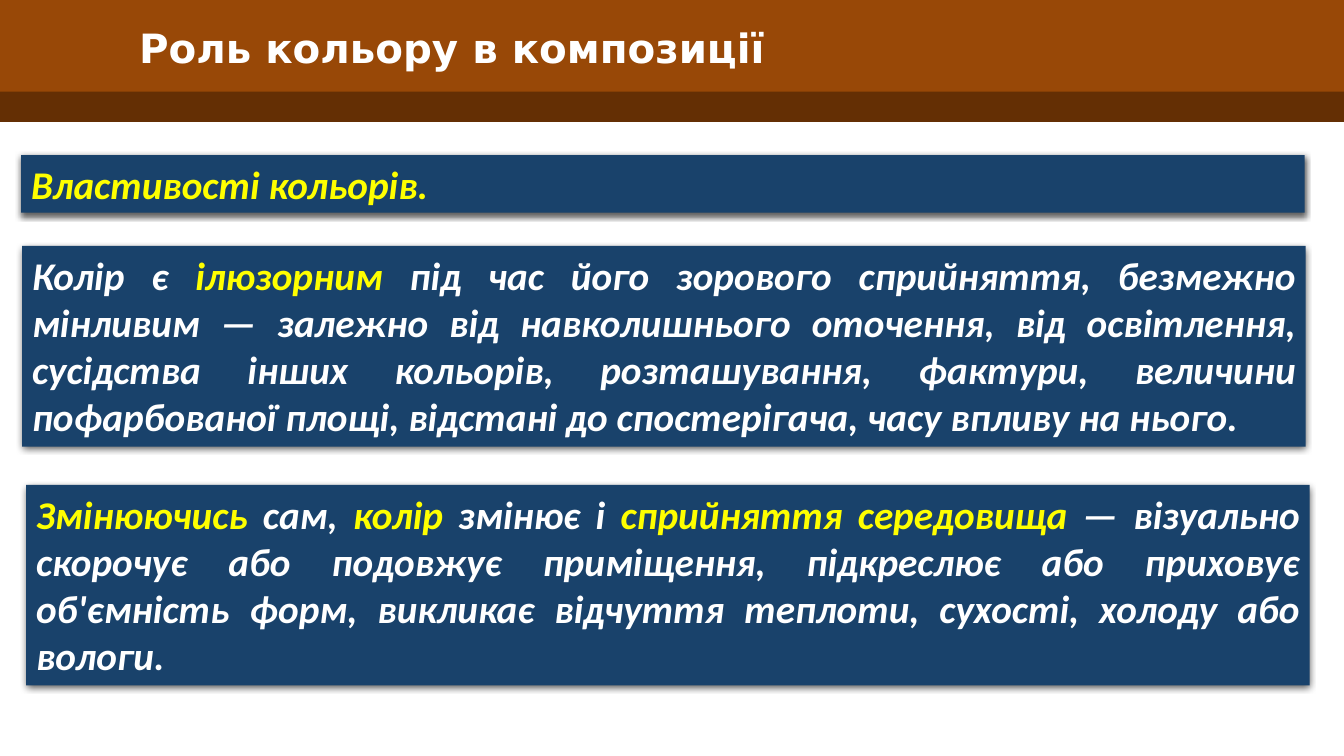
"""Build a slide about the role of colour in composition."""
import lxml.etree
import pptx
import pptx.dml.color
import pptx.enum.shapes
import pptx.enum.text
import pptx.oxml.ns
import pptx.util

Inches = pptx.util.Inches
RGBColor = pptx.dml.color.RGBColor
Align = pptx.enum.text.PP_ALIGN
Anchor = pptx.enum.text.MSO_ANCHOR

WHITE = RGBColor(0xFF, 0xFF, 0xFF)
YELLOW = RGBColor(0xFF, 0xFF, 0x00)
NAVY = RGBColor(0x19, 0x42, 0x6B)
BROWN = RGBColor(0x98, 0x48, 0x07)
DARK_BROWN = RGBColor(0x64, 0x2F, 0x04)

SLIDE_WIDTH = 13.33
PANEL_WIDTH = 12.73
PANELS = [
    (0.21, 1.54, 0.57, "*Властивості кольорів.\u00a0*"),
    (0.22, 2.44, 1.99,
     "Колір є *ілюзорним* під час його зорового сприйняття, безмежно мінливим — "
     "залежно від навколишнього оточення, від освітлення, сусідства інших кольорів, "
     "розташування, фактури, величини пофарбованої площі, відстані до спостерігача, "
     "часу впливу на нього. "),
    (0.26, 4.81, 1.99,
     "*Змінюючись* сам, *колір* змінює і *сприйняття середовища *— візуально "
     "скорочує або подовжує приміщення, підкреслює або приховує об'ємність форм, "
     "викликає відчуття теплоти, сухості, холоду або вологи."),
]


def write_text(shape, text, font="Calibri", size=28, italic=False,
               align=Align.LEFT, anchor=Anchor.TOP):
    frame = shape.text_frame
    frame.word_wrap = True
    frame.auto_size = pptx.enum.text.MSO_AUTO_SIZE.NONE
    frame.vertical_anchor = anchor
    paragraph = frame.paragraphs[0]
    paragraph.alignment = align
    for index, part in enumerate(text.split("*")):
        if part:
            run = paragraph.add_run()
            run.text = part
            run.font.name = font
            run.font.size = pptx.util.Pt(size)
            run.font.bold = True
            run.font.italic = italic
            run.font.color.rgb = YELLOW if index % 2 else WHITE


class SlideBuilder:
    def __init__(self, presentation):
        self.slide = presentation.slides.add_slide(presentation.slide_layouts[5])

    def rectangle(self, left, top, width, height, color):
        shape = self.slide.shapes.add_shape(
            pptx.enum.shapes.MSO_SHAPE.RECTANGLE,
            Inches(left), Inches(top), Inches(width), Inches(height))
        shape.shadow.inherit = False
        shape.fill.solid()
        shape.fill.fore_color.rgb = color
        shape.line.fill.background()
        return shape

    def title(self, text):
        title = self.slide.shapes.title
        title.left, title.top = Inches(1.28), Inches(0.18)
        title.width, title.height = Inches(9.9), Inches(0.58)
        write_text(title, text, font="DejaVu Sans", size=28.8, anchor=Anchor.MIDDLE)
        self.slide.shapes.element.append(title.element)

    def panel(self, left, top, height, text):
        shape = self.rectangle(left, top, PANEL_WIDTH, height, NAVY)
        self.add_shadow(shape)
        write_text(shape, text, italic=True, align=Align.JUSTIFY)

    def add_shadow(self, shape):
        qn = pptx.oxml.ns.qn
        effects = shape.element.spPr.find(qn("a:effectLst"))
        shadow = lxml.etree.SubElement(
            effects, qn("a:outerShdw"), blurRad=str(pptx.util.Pt(4.5)),
            dist=str(pptx.util.Pt(1.5)), dir="5400000", rotWithShape="0")
        color = lxml.etree.SubElement(shadow, qn("a:srgbClr"), val="000000")
        lxml.etree.SubElement(color, qn("a:alpha"), val="63000")


def main():
    presentation = pptx.Presentation()
    presentation.slide_width = Inches(SLIDE_WIDTH)
    presentation.slide_height = Inches(7.5)
    builder = SlideBuilder(presentation)
    builder.rectangle(0, 0.87, SLIDE_WIDTH, 0.34, DARK_BROWN)
    builder.rectangle(0, 0, SLIDE_WIDTH, 0.91, BROWN)
    builder.title("Роль кольору в композиції")
    for left, top, height, text in PANELS:
        builder.panel(left, top, height, text)
    presentation.save("out.pptx")


if __name__ == "__main__":
    main()
